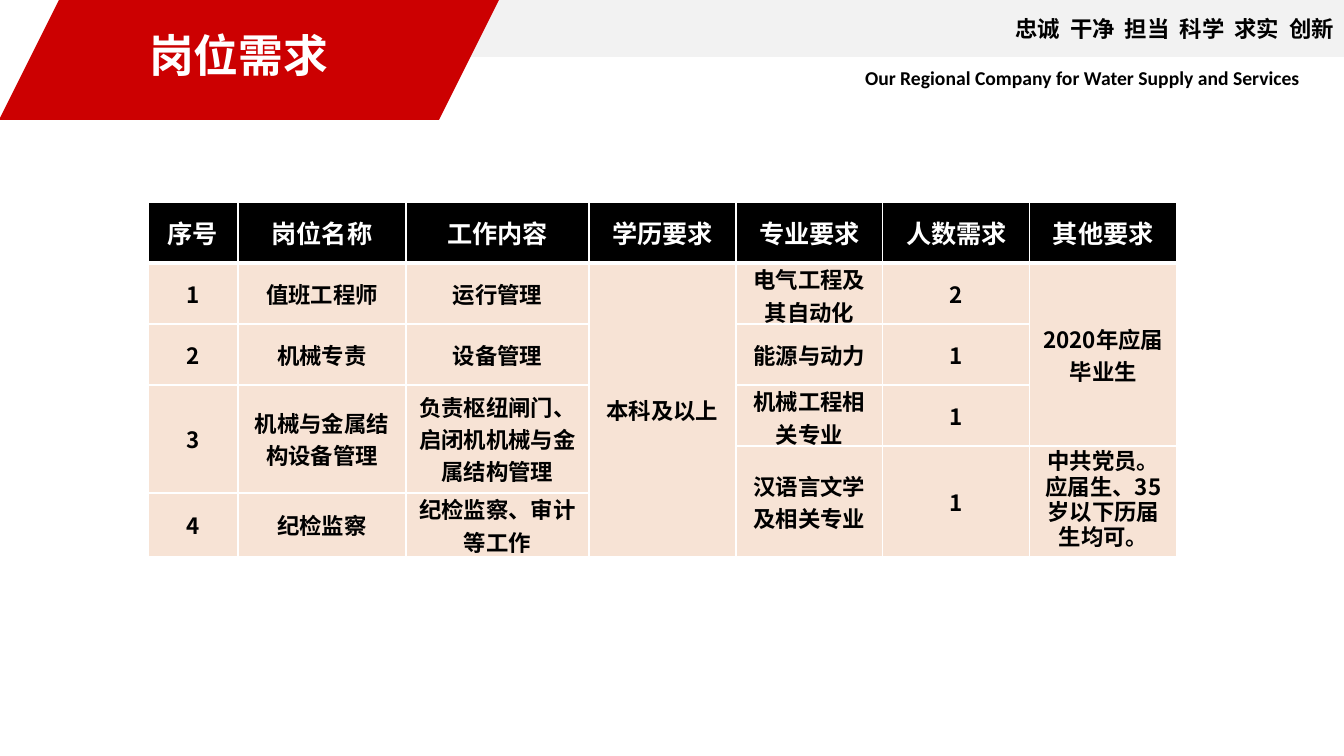
from lxml.etree import SubElement
from pptx import Presentation
from pptx.dml.color import RGBColor
from pptx.enum.shapes import MSO_SHAPE
from pptx.enum.text import MSO_ANCHOR, MSO_AUTO_SIZE, PP_ALIGN
from pptx.oxml.ns import qn
from pptx.util import Emu, Pt

COLORS = {"red": "CC0001", "grey": "F2F2F2", "black": "000000",
          "white": "FFFFFF", "cream": "F7E3D5"}
SANS = "Noto Sans CJK SC"


def px(*sizes):
    return [Emu(round(size * 914400 / 100.8)) for size in sizes]


def write(para, text, size, color, font=SANS):
    run = para.add_run()
    run.text = text
    for key, value in {"size": Pt(size), "bold": True, "name": font}.items():
        setattr(run.font, key, value)
    run.font.color.rgb = RGBColor.from_string(COLORS[color])
    SubElement(run.font._element, qn("a:ea"), typeface=font)
    return run


deck = Presentation()
deck.slide_width, deck.slide_height = px(1344, 756)
slide = deck.slides.add_slide(deck.slide_layouts[5])
shapes = slide.shapes

# Header bands
bands = []
for kind, box, color in [
    (MSO_SHAPE.RECTANGLE, (451, 0, 893, 57), "grey"),
    (MSO_SHAPE.PARALLELOGRAM, (-1, 0, 500, 120), "red"),
]:
    band = shapes.add_shape(kind, *px(*box))
    band.shadow.inherit = False
    band.fill.solid()
    band.fill.fore_color.rgb = RGBColor.from_string(COLORS[color])
    band.line.fill.background()
    bands.append(band)
bands[1].adjustments[0] = 0.5

# Motto, with widened gaps between the words
frame = bands[0].text_frame
frame.vertical_anchor = MSO_ANCHOR.MIDDLE
motto = frame.paragraphs[0]
motto.alignment = PP_ALIGN.RIGHT
for i, word in enumerate("忠诚 干净 担当 科学 求实 创新".split()):
    if i:
        gap = write(motto, " ", 16, "black")
        gap.font._element.set("spc", "360")
    write(motto, word, 16, "black")

# Title, in front of the red band
title = shapes.title
shapes._spTree.append(title._element)
title.left, title.top, title.width, title.height = px(139, 23, 202, 65)
for key, value in {"word_wrap": False, "vertical_anchor": MSO_ANCHOR.TOP,
                   "auto_size": MSO_AUTO_SIZE.SHAPE_TO_FIT_TEXT}.items():
    setattr(title.text_frame, key, value)
para = title.text_frame.paragraphs[0]
para.alignment = PP_ALIGN.LEFT
write(para, "岗位需求", 32, "white")

# Company name
firm = shapes.add_textbox(*px(852, 59, 515, 37)).text_frame
firm.word_wrap = True
firm.margin_left, firm.margin_top, firm.margin_right, firm.margin_bottom = px(13, 7, 13, 7)
write(firm.paragraphs[0], "Our Regional Company for Water Supply and Services",
      14, "black", "Calibri")

# Table of posts
ROWS = [
    ["序号", "岗位名称", "工作内容", "学历要求", "专业要求", "人数需求", "其他要求"],
    ["1", "值班工程师", "运行管理", "本科及以上", "电气工程及其自动化", "2", "2020年应届毕业生"],
    ["2", "机械专责", "设备管理", "", "能源与动力", "1", ""],
    ["3", "机械与金属结构设备管理", "负责枢纽闸门、启闭机机械与金属结构管理", "",
     "机械工程相关专业", "1", ""],
    ["", "", "", "", "汉语言文学及相关专业", "1", "中共党员。应届生、35岁以下历届生均可。"],
    ["4", "纪检监察", "纪检监察、审计等工作", "", "", "", ""],
]
table = shapes.add_table(6, 7, *px(148, 202, 1029, 355)).table
table.horz_banding = False
for col, width in zip(table.columns, px(90, 168, 183, 147, 147, 147, 147)):
    col.width = width
for row, height in zip(table.rows, px(61, 61, 61, 61, 47, 64)):
    row.height = height

# Cells: borders, fill, text
for r, texts in enumerate(ROWS):
    for c, text in enumerate(texts):
        cell = table.cell(r, c)
        props = cell._tc.get_or_add_tcPr()
        for side in "LRTB":
            thick = (r, side) in [(0, "B"), (1, "T")]
            line = SubElement(props, qn(f"a:ln{side}"), w=str(Pt(3 if thick else 1)))
            fill = SubElement(line, qn("a:solidFill"))
            SubElement(fill, qn("a:srgbClr"), val=COLORS["white"])
        cell.fill.solid()
        cell.fill.fore_color.rgb = RGBColor.from_string(COLORS["cream" if r else "black"])
        cell.vertical_anchor = MSO_ANCHOR.MIDDLE
        if r and c not in (0, 3):
            cell.margin_left, cell.margin_right = px(7, 7)
            cell.margin_top = cell.margin_bottom = 0
        para = cell.text_frame.paragraphs[0]
        para.alignment = PP_ALIGN.CENTER
        if text:
            write(para, text, 16 if r else 18, "black" if r else "white")
table.cell(4, 6).text_frame.paragraphs[0].line_spacing = Pt(18)

# Merged blocks: first row, last row, column
for top, end, col in [(1, 5, 3), (1, 3, 6), (3, 4, 0), (3, 4, 1), (3, 4, 2),
                      (4, 5, 4), (4, 5, 5), (4, 5, 6)]:
    table.cell(top, col).merge(table.cell(end, col))

deck.save("out.pptx")
